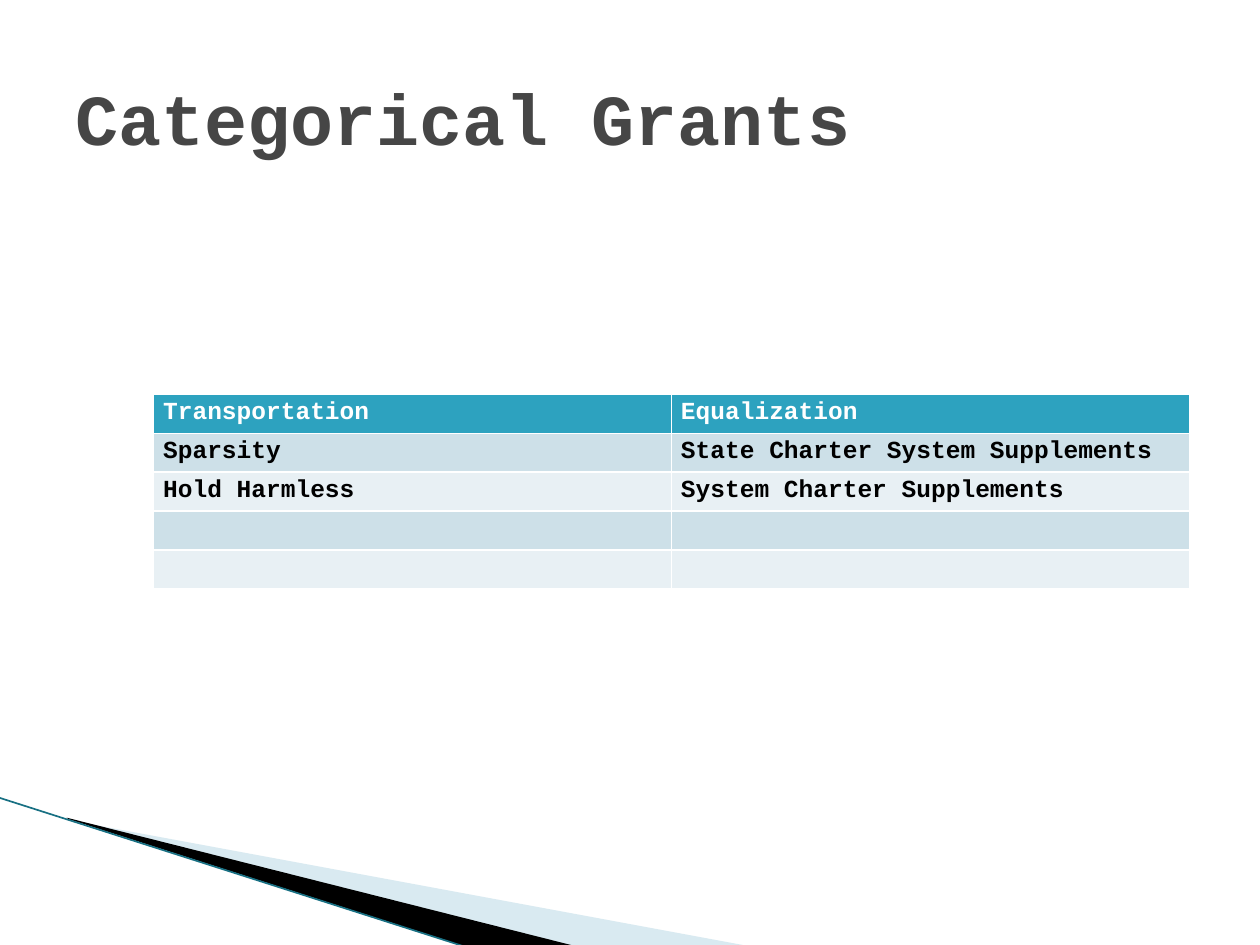
import pptx
import pptx.dml.color
import pptx.enum.shapes
import pptx.enum.text
import pptx.oxml
import pptx.oxml.ns
import pptx.util
from lxml import etree
from dataclasses import dataclass

Inches = pptx.util.Inches
Pt = pptx.util.Pt


@dataclass
class Theme:
    font: str = "Courier New"
    title: str = "464646"
    head: str = "2DA2BF"
    bands: tuple = ("CDE0E8", "E8F0F4")
    pale: str = "A0CBDC"
    edge: str = "187083"
    dark: str = "000000"
    light: str = "FFFFFF"
    big: int = 41
    small: int = 14


def rgb(code):
    return pptx.dml.color.RGBColor.from_string(code)


def sub(node, tag, **attrs):
    return etree.SubElement(node, pptx.oxml.ns.qn(tag), **attrs)


class Deck:
    def __init__(self, theme):
        self.theme = theme
        self.file = pptx.Presentation()
        self.file.slide_width = Inches(10)
        self.file.slide_height = Inches(7.5)
        self.slide = self.file.slides.add_slide(self.file.slide_layouts[6])
        self.shapes = self.slide.shapes

    def style(self, para, size, color):
        font = para.font
        font.name, font.size, font.bold = self.theme.font, Pt(size), True
        font.color.rgb = rgb(color)

    def wedge(self, points, color, alpha=100):
        """Draw a filled outline; alpha is opacity in percent."""
        # The builder rounds to whole units, so points go in as lengths.
        spots = [(Inches(x), Inches(y)) for x, y in points]
        build = self.shapes.build_freeform(*spots[0])
        build.add_line_segments(spots[1:], close=True)
        shape = build.convert_to_shape()
        shape.shadow.inherit = False
        shape.line.fill.background()
        shape.fill.solid()
        shape.fill.fore_color.rgb = rgb(color)
        if alpha < 100:
            tint = shape.fill._xPr.find(".//" + pptx.oxml.ns.qn("a:srgbClr"))
            sub(tint, "a:alpha", val=str(alpha * 1000))

    def line(self, start, end, color, width):
        link = self.shapes.add_connector(
            pptx.enum.shapes.MSO_CONNECTOR.STRAIGHT,
            *(Inches(v) for v in start + end))
        link.line.color.rgb = rgb(color)
        link.line.width = Pt(width)
        sub(link._element.spPr, "a:effectLst")

    def title(self, text, box):
        frame = self.shapes.add_textbox(*(Inches(v) for v in box)).text_frame
        frame.word_wrap = True
        frame.vertical_anchor = pptx.enum.text.MSO_ANCHOR.MIDDLE
        para = frame.paragraphs[0]
        para.text = text
        self.style(para, self.theme.big, self.theme.title)

    def border(self, cell):
        props = cell._tc.get_or_add_tcPr()
        for side in "LRTB":
            edge = sub(props, "a:ln" + side, w=str(Pt(1)))
            sub(sub(edge, "a:solidFill"), "a:srgbClr", val=self.theme.light)

    def table(self, rows, box):
        theme = self.theme
        grid = self.shapes.add_table(
            len(rows), len(rows[0]), *(Inches(v) for v in box)).table
        for r, row in enumerate(rows):
            head = r == 0
            fill = theme.head if head else theme.bands[(r - 1) % 2]
            for c, text in enumerate(row):
                cell = grid.cell(r, c)
                cell.margin_left = cell.margin_right = Pt(5.4)
                cell.margin_top = cell.margin_bottom = Pt(2.7)
                self.border(cell)
                cell.fill.solid()
                cell.fill.fore_color.rgb = rgb(fill)
                para = cell.text_frame.paragraphs[0]
                self.style(para, theme.small,
                           theme.light if head else theme.dark)
                if text:
                    para.text = text
                else:
                    # Keeps an empty row as low as the others.
                    sub(para._p, "a:endParaRPr", sz=str(theme.small * 100))


def main():
    theme = Theme()
    deck = Deck(theme)
    deck.wedge([(0.55, 6.51), (5.95, 7.51), (4.56, 7.51), (0.55, 6.5)],
               theme.pale, 40)
    deck.wedge([(0.53, 6.49), (4.57, 7.51), (3.72, 7.52), (0.54, 6.5)],
               theme.dark)
    deck.line((-0.01, 6.33), (3.71, 7.52), theme.edge, 0.95)
    deck.title("Categorical Grants", (0.5, 0.3, 9, 1.25))
    deck.table([
        ("Transportation", "Equalization"),
        ("Sparsity", "State Charter System Supplements"),
        ("Hold Harmless", "System Charter Supplements"),
        ("", ""),
        ("", ""),
    ], (1.22, 3.13, 8.22, 1.5))
    deck.file.save("out.pptx")


if __name__ == "__main__":
    main()
